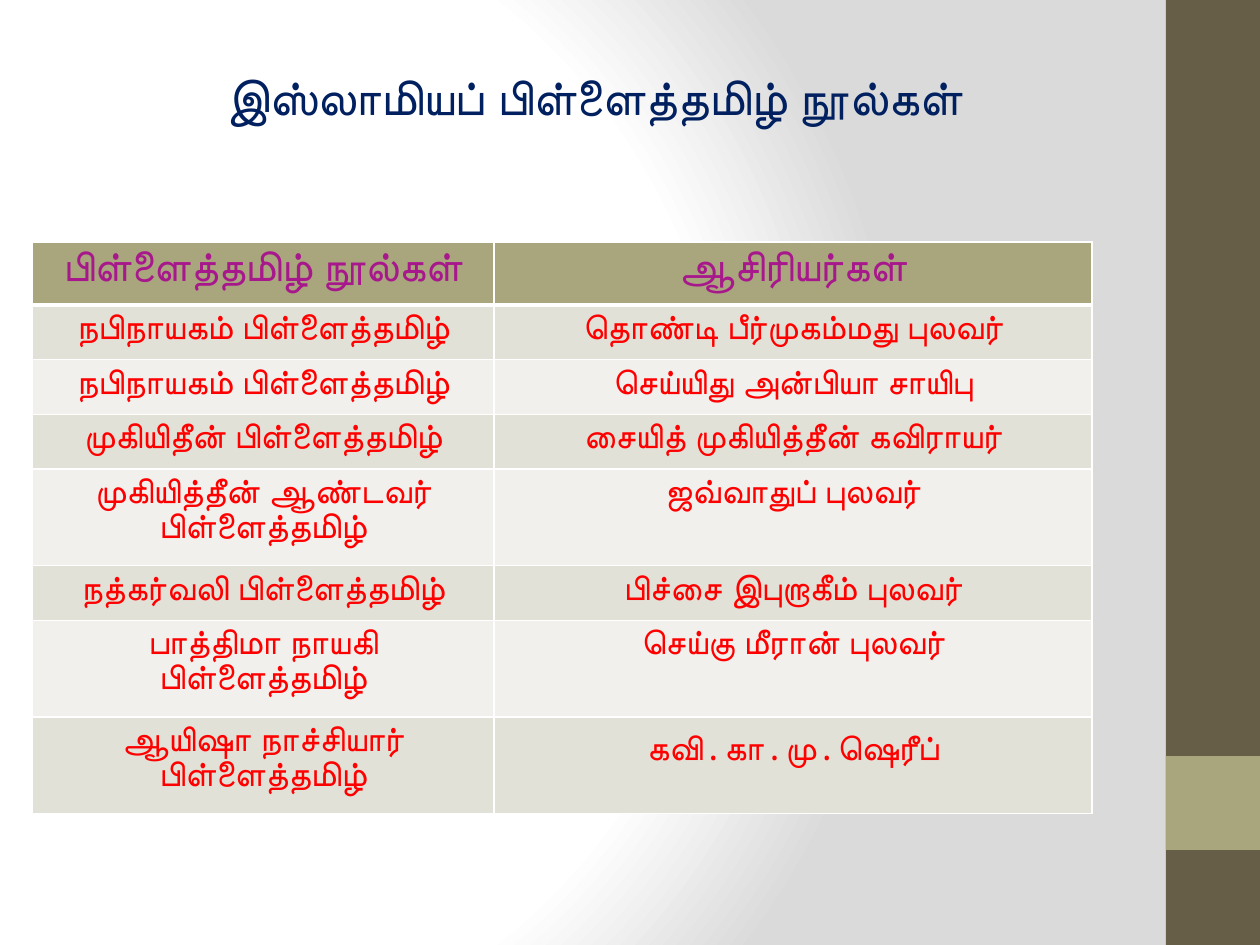
import pptx
import pptx.dml.color
import pptx.enum.shapes
import pptx.enum.text
import pptx.oxml
import pptx.oxml.ns
import pptx.util

EMU_PER_PX = 914400 / 126
FONT = "Noto Sans Mono"
COLORS = {
    "white": "FFFFFF", "grey": "DADADA", "brown": "675E47", "olive": "A9A57C",
    "navy": "002060", "purple": "A8188D", "red": "FF0000",
    "band_dark": "E2E1D7", "band_light": "F1F0EC",
}
TITLE = "இஸ்லாமியப் பிள்ளைத்தமிழ் நூல்கள்"
BOOKS = [
    ("பிள்ளைத்தமிழ் நூல்கள்", "ஆசிரியர்கள்"),
    ("நபிநாயகம் பிள்ளைத்தமிழ்", "தொண்டி பீர்முகம்மது புலவர்"),
    ("நபிநாயகம் பிள்ளைத்தமிழ்", "செய்யிது அன்பியா சாயிபு"),
    ("முகியிதீன் பிள்ளைத்தமிழ்", "சையித் முகியித்தீன் கவிராயர்"),
    ("முகியித்தீன் ஆண்டவர் பிள்ளைத்தமிழ்", "ஜவ்வாதுப் புலவர்"),
    ("நத்கர்வலி பிள்ளைத்தமிழ்", "பிச்சை இபுறாகீம் புலவர்"),
    ("பாத்திமா நாயகி பிள்ளைத்தமிழ்", "செய்கு மீரான் புலவர்"),
    ("ஆயிஷா நாச்சியார் பிள்ளைத்தமிழ்", "கவி.கா.மு.ஷெரீப்"),
]


def px(length):
    return pptx.util.Emu(round(length * EMU_PER_PX))


def rgb(name):
    return pptx.dml.color.RGBColor.from_string(COLORS[name])


def write_text(frame, text, size, color, bold=False):
    para = frame.paragraphs[0]
    para.alignment = pptx.enum.text.PP_ALIGN.CENTER
    span = para.add_run()
    span.text = text
    span.font.name = FONT
    span.font.size = pptx.util.Pt(size)
    span.font.bold = bold
    span.font.color.rgb = rgb(color)


def paint_background(page):
    """Fill the page with a radial gradient centred left of the middle."""
    page.background.fill.solid()
    properties = page.background._cSld.bg.bgPr
    solid = properties.find(pptx.oxml.ns.qn("a:solidFill"))
    stops = "".join(
        f'<a:gs pos="{percent * 1000}"><a:srgbClr val="{COLORS[name]}"/></a:gs>'
        for percent, name in [(0, "white"), (75, "white"), (100, "grey")])
    gradient = pptx.oxml.parse_xml(
        f'<a:gradFill {pptx.oxml.ns.nsdecls("a")} rotWithShape="1">'
        f'<a:gsLst>{stops}</a:gsLst><a:path path="circle">'
        '<a:fillToRect l="20000" t="50000" r="100000" b="50000"/>'
        '</a:path></a:gradFill>')
    properties.replace(solid, gradient)


def add_block(page, left, top, width, height, color):
    block = page.shapes.add_shape(
        pptx.enum.shapes.MSO_SHAPE.RECTANGLE,
        px(left), px(top), px(width), px(height))
    block.shadow.inherit = False
    block.fill.solid()
    block.fill.fore_color.rgb = rgb(color)
    block.line.fill.background()


def add_side_band(page, left, top, width, height):
    """Draw the dark band with a square accent four fifths of the way down."""
    add_block(page, left, top, width, height, "brown")
    add_block(page, left, top + height * 4 // 5, width, width, "olive")


def add_title(page, left, top, width, height):
    box = page.shapes.add_textbox(px(left), px(top), px(width), px(height))
    box.text_frame.word_wrap = True
    box.text_frame.auto_size = pptx.enum.text.MSO_AUTO_SIZE.SHAPE_TO_FIT_TEXT
    write_text(box.text_frame, TITLE, 28, "navy", bold=True)


def set_borders(cell, top=1, bottom=1):
    """Give the cell white borders, with top and bottom widths in points."""
    properties = cell._tc.get_or_add_tcPr()
    for side, points in [("L", 1), ("R", 1), ("T", top), ("B", bottom)]:
        properties.append(pptx.oxml.parse_xml(
            f'<a:ln{side} {pptx.oxml.ns.nsdecls("a")} w="{pptx.util.Pt(points)}">'
            f'<a:solidFill><a:srgbClr val="{COLORS["white"]}"/></a:solidFill>'
            f'</a:ln{side}>'))


def add_book_table(page, left, top, width, height):
    table = page.shapes.add_table(
        len(BOOKS), 2, px(left), px(top), px(width), px(height)).table
    first_width = 462
    for column, column_width in zip(table.columns, (first_width, width - first_width)):
        column.width = px(column_width)
    for row_index, texts in enumerate(BOOKS):
        header = row_index == 0
        table.rows[row_index].height = px(52)
        band = "band_dark" if row_index % 2 else "band_light"
        for column_index, text in enumerate(texts):
            cell = table.cell(row_index, column_index)
            set_borders(cell, top=3 if row_index == 1 else 1, bottom=3 if header else 1)
            cell.fill.solid()
            cell.fill.fore_color.rgb = rgb("olive" if header else band)
            write_text(cell.text_frame, text, 24 if header else 20,
                       "purple" if header else "red", bold=header)


def main():
    deck = pptx.Presentation()
    deck.slide_width, deck.slide_height = px(1260), px(945)
    page = deck.slides.add_slide(deck.slide_layouts[6])
    paint_background(page)
    add_side_band(page, 1166, 0, 94, 945)
    add_title(page, 154, 60, 881, 72)
    add_book_table(page, 32, 242, 1060, 571)
    deck.save("out.pptx")


if __name__ == "__main__":
    main()
